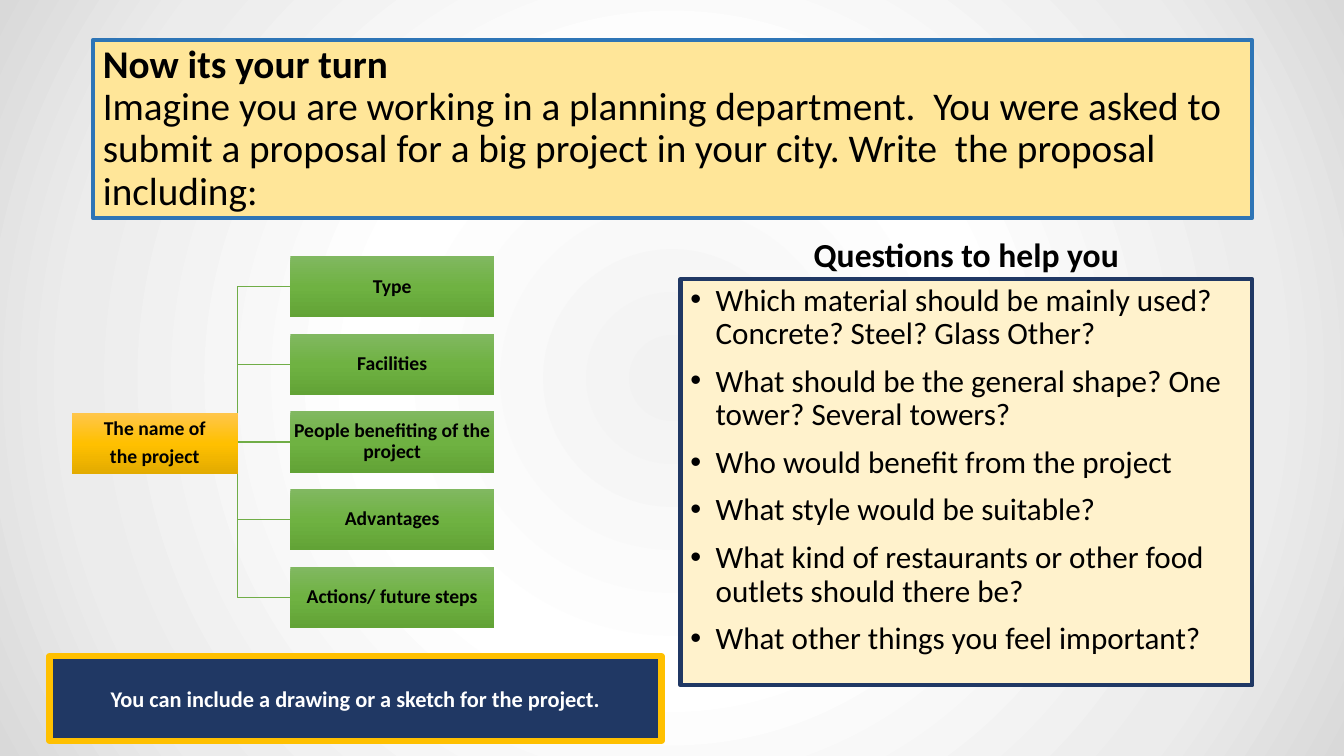
from pptx import Presentation
from pptx.dml.color import RGBColor
from pptx.enum.shapes import MSO_SHAPE
from pptx.enum.text import MSO_ANCHOR, MSO_AUTO_SIZE, PP_ALIGN
from pptx.oxml import parse_xml
from pptx.oxml.ns import nsdecls
from pptx.util import Inches, Pt
from lxml.etree import SubElement
from pptx.oxml.ns import qn

TITLE = "Now its your turn"
TASK = ("Imagine you are working in a planning department.  You were asked to submit "
        "a proposal for a big project in your city. Write  the proposal including:")
HEADING = "Questions to help you"
QUESTIONS = [
    "Which material should be mainly used? Concrete? Steel? Glass Other?",
    "What should be the general shape? One tower? Several towers?",
    "Who would benefit from the project",
    "What style would be suitable?",
    "What kind of restaurants or other food outlets should there be?",
    "What other things you feel important?",
]
HINT = "You can include a drawing or a sketch for the project."
ROOT = ["The name of", "the project"]
BRANCHES = ["Type", "Facilities", "People benefiting of the project",
            "Advantages", "Actions/ future steps"]

BLACK = RGBColor(0x00, 0x00, 0x00)
WHITE = RGBColor(0xFF, 0xFF, 0xFF)
YELLOW = RGBColor(0xFF, 0xE6, 0x99)
CREAM = RGBColor(0xFF, 0xF2, 0xCC)
BLUE = RGBColor(0x2E, 0x75, 0xB6)
NAVY = RGBColor(0x20, 0x38, 0x64)
GOLD = RGBColor(0xFF, 0xC0, 0x00)
GREEN = RGBColor(0x70, 0xAD, 0x47)
BACKDROP = [(0, "F2F2F2"), (39, "FFFFFF"), (78, "ECECEC"), (100, "D9D9D9")]
GOLD_FADE = [(0, "FFC64B"), (50, "FFC000"), (100, "E3AB00")]
GREEN_FADE = [(0, "81B861"), (50, "6FB242"), (100, "62A336")]
DOWNWARD = '<a:lin ang="5400000" scaled="0"/>'
RADIAL = ('<a:path path="circle"><a:fillToRect l="50000" t="50000" '
          'r="50000" b="50000"/></a:path>')

ROOT_BOX = (0.71, 4.1, 1.65, 0.6)
BRANCH_X, BRANCH_Y, BRANCH_W, BRANCH_H, BRANCH_PITCH = 2.88, 2.54, 2.02, 0.61, 0.77


def set_gradient(fill, element, stops, direction):
    """Fill with a gradient of any number of stops."""
    fill.gradient()
    old = element.xpath(".//a:gradFill")[0]
    marks = "".join(f'<a:gs pos="{pos * 1000}"><a:srgbClr val="{color}"/></a:gs>'
                    for pos, color in stops)
    old.getparent().replace(old, parse_xml(
        f'<a:gradFill {nsdecls("a")} rotWithShape="1"><a:gsLst>{marks}</a:gsLst>'
        f'{direction}</a:gradFill>'))


def outline(sp, fill, line, width):
    """Give a box a solid fill and a border."""
    sp.fill.solid()
    sp.fill.fore_color.rgb = fill
    sp.line.color.rgb = line
    sp.line.width = Pt(width)


def write(sp, lines, size, color=BLACK, bold=False, align=PP_ALIGN.CENTER,
          anchor=MSO_ANCHOR.MIDDLE, spacing=0.9, before=0, after=0):
    """Put formatted paragraphs into a shape."""
    tf = sp.text_frame
    tf.text = "\n".join(lines)
    tf.word_wrap = True
    tf.auto_size = MSO_AUTO_SIZE.NONE
    tf.vertical_anchor = anchor
    for p in tf.paragraphs:
        p.alignment = align
        p.line_spacing = spacing
        p.space_before, p.space_after = Pt(before), Pt(after)
        for r in p.runs:
            r.font.name, r.font.size = "Calibri", Pt(size)
            r.font.bold = bold
            r.font.color.rgb = color
    return tf


def add_box(s, box):
    """Add a rectangle without a shadow."""
    sp = s.shapes.add_shape(MSO_SHAPE.RECTANGLE, *map(Inches, box))
    sp.shadow.inherit = False
    return sp


def add_node(s, box, lines, stops):
    """Add one labelled box of the diagram."""
    sp = add_box(s, box)
    set_gradient(sp.fill, sp.element, stops, DOWNWARD)
    sp.line.fill.background()
    tf = write(sp, lines, 14, bold=True, after=5)
    tf.margin_left = tf.margin_right = tf.margin_top = tf.margin_bottom = Inches(0.01)


def add_elbow(s, start, end):
    """Add a line from the root that turns halfway towards a branch."""
    (x1, y1), (x2, y2) = start, end
    mid = (x1 + x2) / 2
    builder = s.shapes.build_freeform(Inches(x1), Inches(y1))
    builder.add_line_segments([(Inches(x), Inches(y)) for x, y in
                               ((mid, y1), (mid, y2), (x2, y2))], close=False)
    sp = builder.convert_to_shape()
    sp.shadow.inherit = False
    sp.fill.background()
    sp.line.color.rgb = GREEN
    sp.line.width = Pt(1)


def add_diagram(s):
    """Draw the root, its branches and the lines between them."""
    left, top, width, height = ROOT_BOX
    tops = [BRANCH_Y + i * BRANCH_PITCH for i in range(len(BRANCHES))]
    for y in reversed(tops):
        add_elbow(s, (left + width - 0.53, top + height / 2), (BRANCH_X, y + BRANCH_H / 2))
    add_node(s, ROOT_BOX, ROOT, GOLD_FADE)
    for y, label in zip(tops, BRANCHES):
        add_node(s, (BRANCH_X, y, BRANCH_W, BRANCH_H), [label], GREEN_FADE)


def main():
    """Build the slide and save it."""
    prs = Presentation()
    prs.slide_width, prs.slide_height = Inches(13.33), Inches(7.5)
    s = prs.slides.add_slide(prs.slide_layouts[5])
    set_gradient(s.background.fill, s.element, BACKDROP, RADIAL)

    title = s.shapes.title
    title.left, title.top, title.width, title.height = map(Inches, (0.92, 0.4, 11.5, 1.76))
    outline(title, YELLOW, BLUE, 3)
    tf = write(title, [TITLE + "\v" + TASK], 28, align=PP_ALIGN.LEFT)
    tf.paragraphs[0].runs[0].font.bold = True

    heading = s.shapes.add_textbox(*map(Inches, (6.75, 1.87, 5.67, 0.9)))
    write(heading, [HEADING], 24, bold=True, anchor=MSO_ANCHOR.BOTTOM, before=10)

    questions = add_box(s, (6.75, 2.77, 5.67, 4.03))
    outline(questions, CREAM, NAVY, 3)
    tf = write(questions, QUESTIONS, 22.2, align=PP_ALIGN.LEFT,
               anchor=MSO_ANCHOR.TOP, before=10)
    for p in tf.paragraphs:
        pPr = p._p.get_or_add_pPr()
        pPr.set("marL", str(Inches(0.25)))
        pPr.set("indent", str(Inches(-0.25)))
        SubElement(pPr, qn("a:buFont")).set("typeface", "Arial")
        SubElement(pPr, qn("a:buChar")).set("char", "•")

    hint = add_box(s, (0.49, 6.51, 6.07, 0.84))
    outline(hint, NAVY, GOLD, 4.5)
    write(hint, [HINT], 16, WHITE, bold=True, spacing=1.0)

    add_diagram(s)
    prs.save("out.pptx")


if __name__ == "__main__":
    main()
